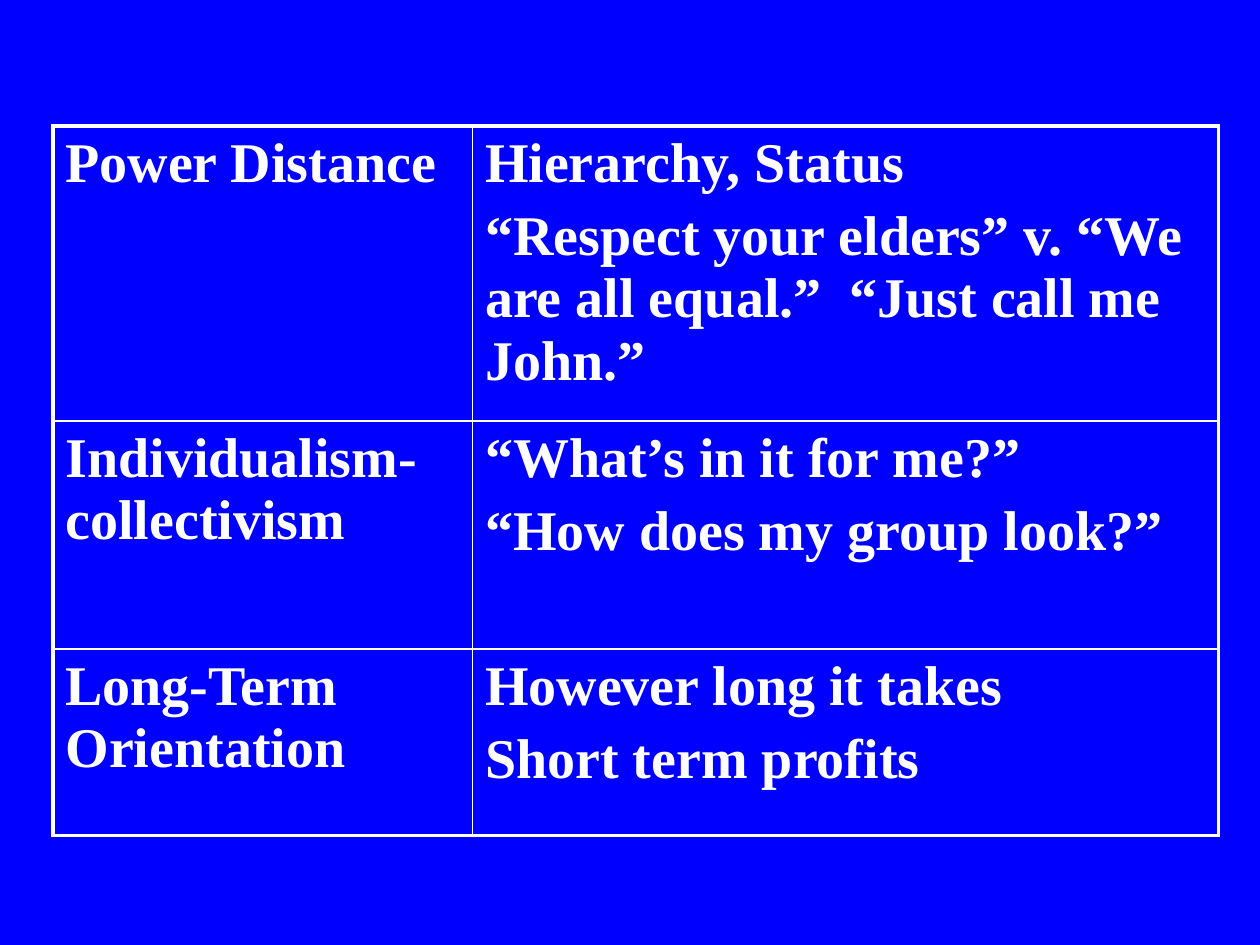
from dataclasses import dataclass

from lxml.etree import SubElement as Sub
from pptx import Presentation
from pptx.dml.color import RGBColor as RGB
from pptx.oxml.ns import qn
from pptx.util import Pt


@dataclass(frozen=True)
class Theme:
    back: str = "0000FF"
    ink: str = "FFFFFF"
    font: str = "Times New Roman"
    size: float = 32
    gap: float = 6.4
    thick: float = 2.25
    thin: float = 1


THEME = Theme()
BOX = (30.24, 72, 666, 405.4)
COLS = (0.36, 0.64)
ROWS = (168.5, 130.3, 106.6)
TRAITS = [
    ("Power Distance",
     ["Hierarchy, Status",
      "“Respect your elders” v. “We are all equal.”  “Just call me John.”"]),
    ("Individualism-collectivism",
     ["“What’s in it for me?”", "“How does my group look?”"]),
    ("Long-Term Orientation",
     ["However long it takes", "Short term profits"]),
]


def write(frame, lines, size=THEME.size, color=THEME.ink, bold=True):
    frame.word_wrap = True
    for i, line in enumerate(lines):
        para = frame.add_paragraph() if i else frame.paragraphs[0]
        if i:
            para.space_before = Pt(THEME.gap)
        run = para.add_run()
        run.text = line
        font = run.font
        font.name, font.size, font.bold = THEME.font, Pt(size), bold
        font.color.rgb = RGB.from_string(color)


def edge(cell, **widths):
    """Draw the cell's borders; sides come in the order L, R, T, B."""
    props = cell._tc.get_or_add_tcPr()
    for side, width in widths.items():
        line = Sub(props, qn(f"a:ln{side}"), w=str(Pt(width)))
        fill = Sub(line, qn("a:solidFill"))
        Sub(fill, qn("a:srgbClr"), val=THEME.ink)


def add_grid(slide, box, traits):
    left, top, width, height = box
    grid = slide.shapes.add_table(
        len(traits), len(COLS), Pt(left), Pt(top), Pt(width), Pt(height)).table
    grid.first_row = grid.horz_banding = False
    for col, share in zip(grid.columns, COLS):
        col.width = Pt(width * share)
    for row, tall in zip(grid.rows, ROWS):
        row.height = Pt(tall)

    def weight(outer):
        return THEME.thick if outer else THEME.thin

    for r, (trait, notes) in enumerate(traits):
        for c, lines in enumerate(([trait], notes)):
            cell = grid.cell(r, c)
            edge(cell, L=weight(c == 0), R=weight(c == len(COLS) - 1),
                 T=weight(r == 0), B=weight(r == len(traits) - 1))
            cell.fill.background()
            write(cell.text_frame, lines)


def main():
    deck = Presentation()
    deck.slide_width, deck.slide_height = Pt(720), Pt(540)
    slide = deck.slides.add_slide(deck.slide_layouts[6])
    fill = slide.background.fill
    fill.solid()
    fill.fore_color.rgb = RGB.from_string(THEME.back)
    add_grid(slide, BOX, TRAITS)
    deck.save("out.pptx")


if __name__ == "__main__":
    main()
